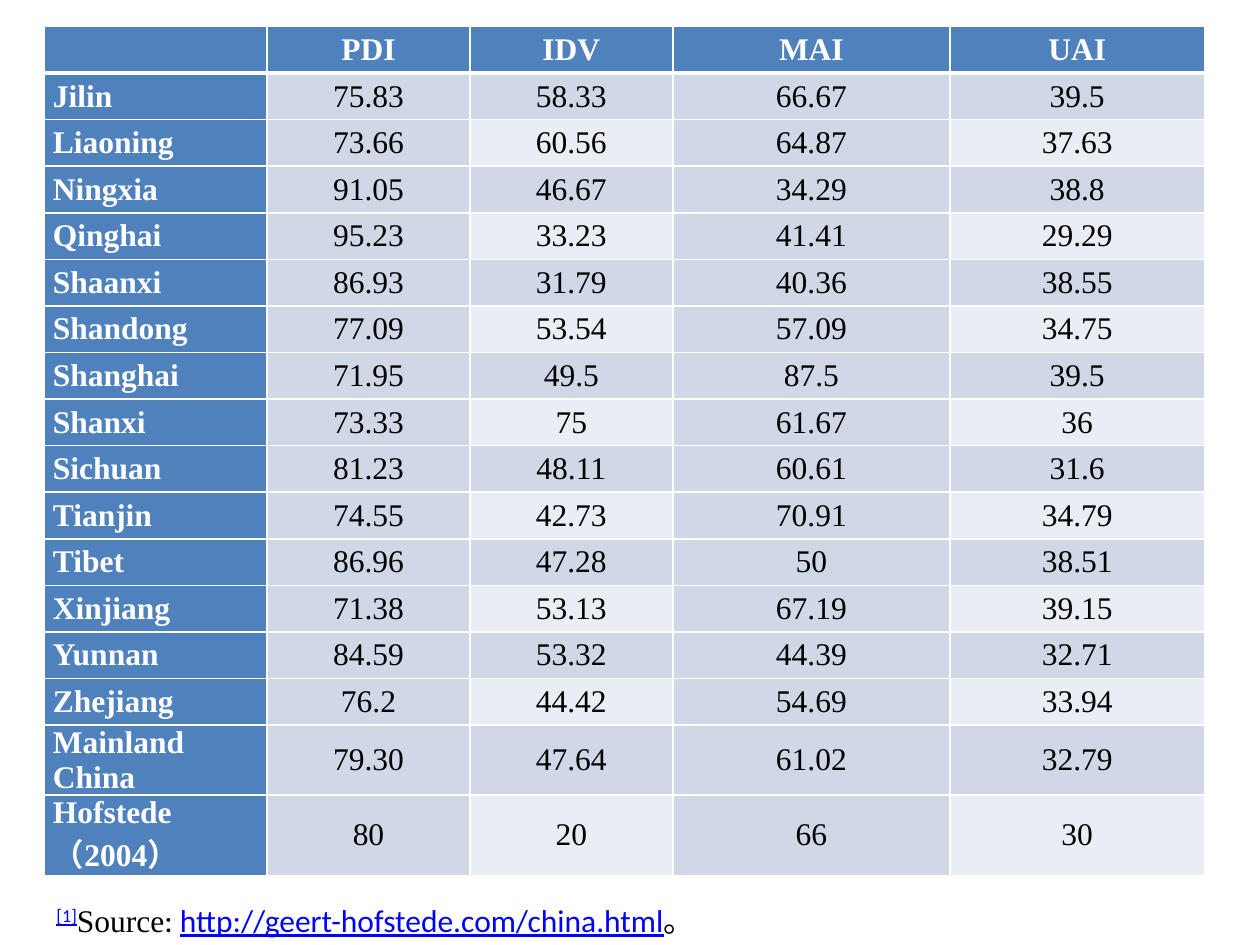
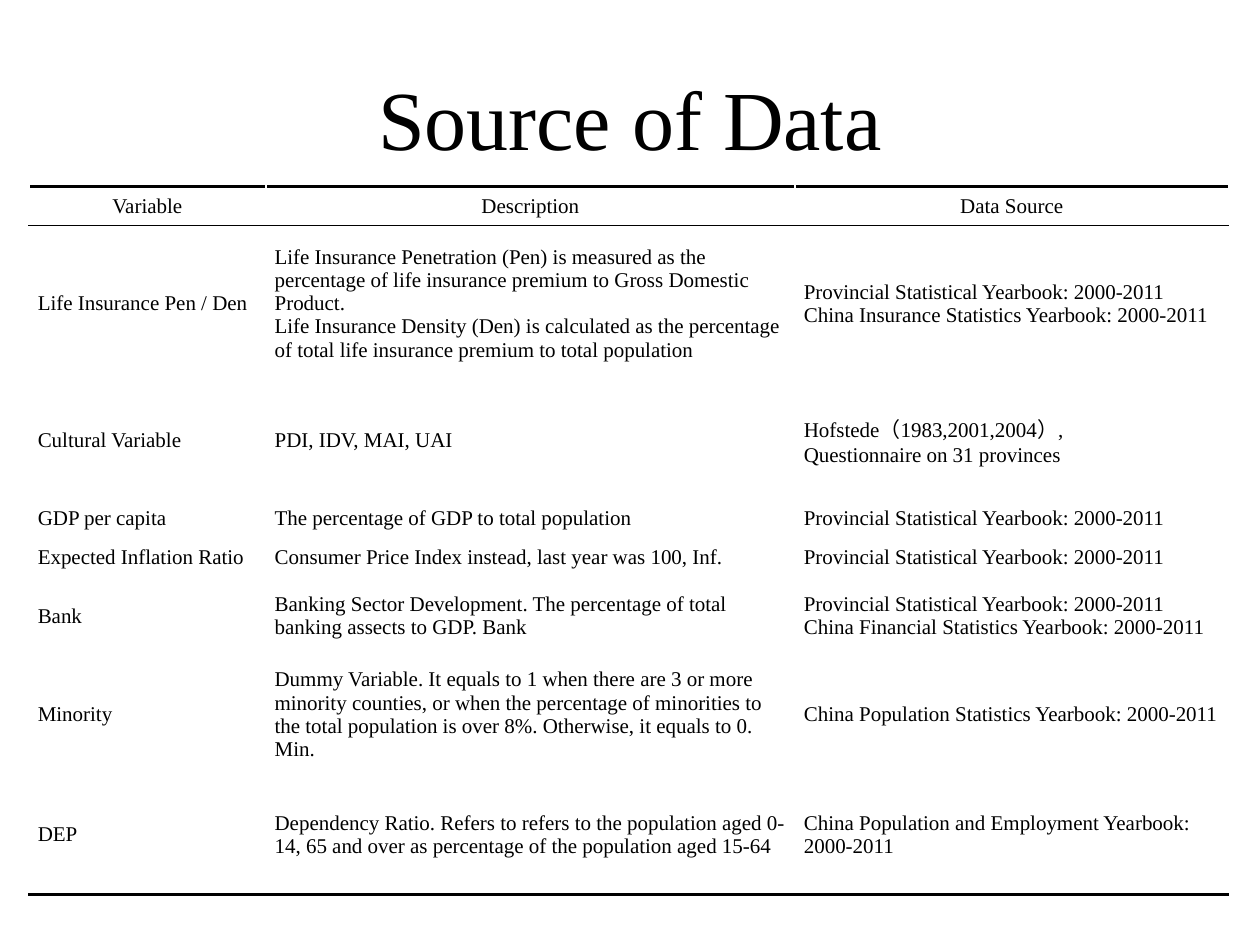
import dataclasses
import pptx
import pptx.dml.color
import pptx.enum.text
import pptx.oxml
import pptx.oxml.ns
import pptx.util

Inches = pptx.util.Inches
Align = pptx.enum.text.PP_ALIGN
Middle = pptx.enum.text.MSO_ANCHOR.MIDDLE


@dataclasses.dataclass(frozen=True)
class Theme:
    ink: str = "000000"
    paper: str = "FFFFFF"
    head: str = "4F81BD"
    band: str = "D0D8E8"
    pale: str = "E9EDF4"
    link: str = "0000FF"
    serif: str = "Times New Roman"
    sans: str = "Calibri"
    title: int = 48
    score: int = 18
    small: int = 12


THEME = Theme()

SCORES = """
Jilin 75.83 58.33 66.67 39.5
Liaoning 73.66 60.56 64.87 37.63
Ningxia 91.05 46.67 34.29 38.8
Qinghai 95.23 33.23 41.41 29.29
Shaanxi 86.93 31.79 40.36 38.55
Shandong 77.09 53.54 57.09 34.75
Shanghai 71.95 49.5 87.5 39.5
Shanxi 73.33 75 61.67 36
Sichuan 81.23 48.11 60.61 31.6
Tianjin 74.55 42.73 70.91 34.79
Tibet 86.96 47.28 50 38.51
Xinjiang 71.38 53.13 67.19 39.15
Yunnan 84.59 53.32 44.39 32.71
Zhejiang 76.2 44.42 54.69 33.94
Mainland China 79.30 47.64 61.02 32.79
Hofstede（2004） 80 20 66 30
"""
LONG = ("Mainland China", "Hofstede（2004）")

YEARBOOK = "Provincial Statistical Yearbook: 2000-2011"
SOURCES = [
    ("Variable", "Description", "Data Source"),
    ("Life Insurance Pen / Den",
     "Life Insurance Penetration (Pen) is measured as the percentage of life "
     "insurance premium to Gross Domestic Product.\n"
     "Life Insurance Density (Den) is calculated as the percentage of total "
     "life insurance premium to total population",
     YEARBOOK + "\nChina Insurance Statistics Yearbook: 2000-2011"),
    ("Cultural Variable", "PDI, IDV, MAI, UAI",
     "Hofstede（1983,2001,2004）,\nQuestionnaire on 31 provinces"),
    ("GDP per capita", "The percentage of GDP to total population", YEARBOOK),
    ("Expected Inflation Ratio",
     "Consumer Price Index instead, last year was 100, Inf.", YEARBOOK),
    ("Bank",
     "Banking Sector Development. The percentage of total banking assects "
     "to GDP. Bank",
     YEARBOOK + "\nChina Financial Statistics Yearbook: 2000-2011"),
    ("Minority",
     "Dummy Variable. It equals to 1 when there are 3 or more minority "
     "counties, or when the percentage of minorities to the total population "
     "is over 8%. Otherwise, it equals to 0. Min.",
     "China Population Statistics Yearbook: 2000-2011"),
    ("DEP",
     "Dependency Ratio. Refers to refers to the population aged 0-14, 65 and "
     "over as percentage of the population aged 15-64",
     "China Population and Employment Yearbook: 2000-2011"),
]


def write(frame, text, size, font=THEME.serif, color=THEME.ink, bold=False,
          line=False, align=None, base=0):
    """Add text to the frame's last paragraph; each line break starts a new one."""
    for i, part in enumerate(text.split("\n")):
        para = frame.add_paragraph() if i else frame.paragraphs[-1]
        if align is not None:
            para.alignment = align
        run = para.add_run()
        run.text = part
        run.font.size = pptx.util.Pt(size)
        run.font.name = font
        run.font.bold = bold
        run.font.underline = line
        run.font.color.rgb = pptx.dml.color.RGBColor.from_string(color)
        if base:
            run.font._element.set("baseline", str(base * 1000))


def edge(cell, **sides):
    """Draw cell borders, each side given as (colour, points)."""
    props = cell._tc.get_or_add_tcPr()
    for side in "LRTB":
        if side in sides:
            color, width = sides[side]
            props.append(pptx.oxml.parse_xml(
                f'<a:ln{side} {pptx.oxml.ns.nsdecls("a")} w="{pptx.util.Pt(width)}">'
                f'<a:solidFill><a:srgbClr val="{color}"/></a:solidFill></a:ln{side}>'))


def grid(slide, left, top, cols, rows):
    """Add a plain table with the given column widths and row heights."""
    frame = slide.shapes.add_table(len(rows), len(cols), Inches(left), Inches(top),
                                   Inches(sum(cols)), Inches(sum(rows)))
    table = frame.table
    table.first_row = table.horz_banding = False
    for col, width in zip(table.columns, cols):
        col.width = Inches(width)
    for row, height in zip(table.rows, rows):
        row.height = Inches(height)
    for cell in table.iter_cells():
        cell.vertical_anchor = Middle
        cell.margin_left = cell.margin_right = Inches(0.07)
        cell.margin_top = cell.margin_bottom = 0
    return table


def score_table(slide, left, top):
    rows = [["", "PDI", "IDV", "MAI", "UAI"]]
    rows += [line.rsplit(" ", 4) for line in SCORES.strip().split("\n")]
    table = grid(slide, left, top, [1.77, 1.61, 1.61, 2.2, 2.02], [0.37] * len(rows))
    thin, thick = (THEME.paper, 1), (THEME.paper, 3)
    for r, row in enumerate(rows):
        for c, text in enumerate(row):
            cell = table.cell(r, c)
            edge(cell, L=thin, R=thin, T=thick if r == 1 else thin,
                 B=thin if r else thick)
            label = r == 0 or c == 0
            pale = r % 2 == 0 and c % 2 == 0
            fill = THEME.head if label else THEME.pale if pale else THEME.band
            cell.fill.solid()
            cell.fill.fore_color.rgb = pptx.dml.color.RGBColor.from_string(fill)
            align = Align.CENTER if c else Align.LEFT if text in LONG else Align.JUSTIFY
            if text:
                write(cell.text_frame, text, THEME.score, bold=label, align=align,
                      color=THEME.paper if label else THEME.ink)


def footnote(slide, left, top, width, height):
    box = slide.shapes.add_textbox(Inches(left), Inches(top), Inches(width), Inches(height))
    frame = box.text_frame
    frame.word_wrap = True
    frame.vertical_anchor = Middle
    link = dict(font=THEME.sans, color=THEME.link, line=True)
    write(frame, "[1]", THEME.score, base=30, **link)
    write(frame, "Source", THEME.score)
    write(frame, ": ", THEME.score, font=THEME.sans)
    write(frame, "http://geert-hofstede.com/china.html", THEME.score, **link)
    write(frame, "。", THEME.score, font=THEME.sans)


def heading(slide, text, left, top, width, height):
    title = slide.shapes.title
    title.left, title.top = Inches(left), Inches(top)
    title.width, title.height = Inches(width), Inches(height)
    title.text_frame.vertical_anchor = Middle
    write(title.text_frame, text, THEME.title, align=Align.CENTER)


def source_table(slide, left, top):
    heights = [0.31, 1.24, 0.93, 0.31, 0.31, 0.62, 0.95, 0.95]
    table = grid(slide, left, top, [1.88, 4.2, 3.44], heights)
    thin, thick = (THEME.ink, 1), (THEME.ink, 1.5)
    rules = {0: dict(T=thick, B=thin), 1: dict(T=thin), len(SOURCES) - 1: dict(B=thick)}
    for r, row in enumerate(SOURCES):
        for c, text in enumerate(row):
            cell = table.cell(r, c)
            edge(cell, **rules.get(r, {}))
            cell.fill.background()
            write(cell.text_frame, text, THEME.small,
                  align=Align.LEFT if r else Align.CENTER)


def main():
    deck = pptx.Presentation()
    deck.slide_width, deck.slide_height = Inches(10), Inches(7.5)

    scores = deck.slides.add_slide(deck.slide_layouts[6])
    score_table(scores, 0.35, 0.21)
    footnote(scores, 0.35, 7.1, 6.3, 0.4)

    sources = deck.slides.add_slide(deck.slide_layouts[5])
    heading(sources, "Source of Data", 0.5, 0.3, 9, 1.25)
    source_table(sources, 0.23, 1.48)

    deck.save("out.pptx")


if __name__ == "__main__":
    main()
